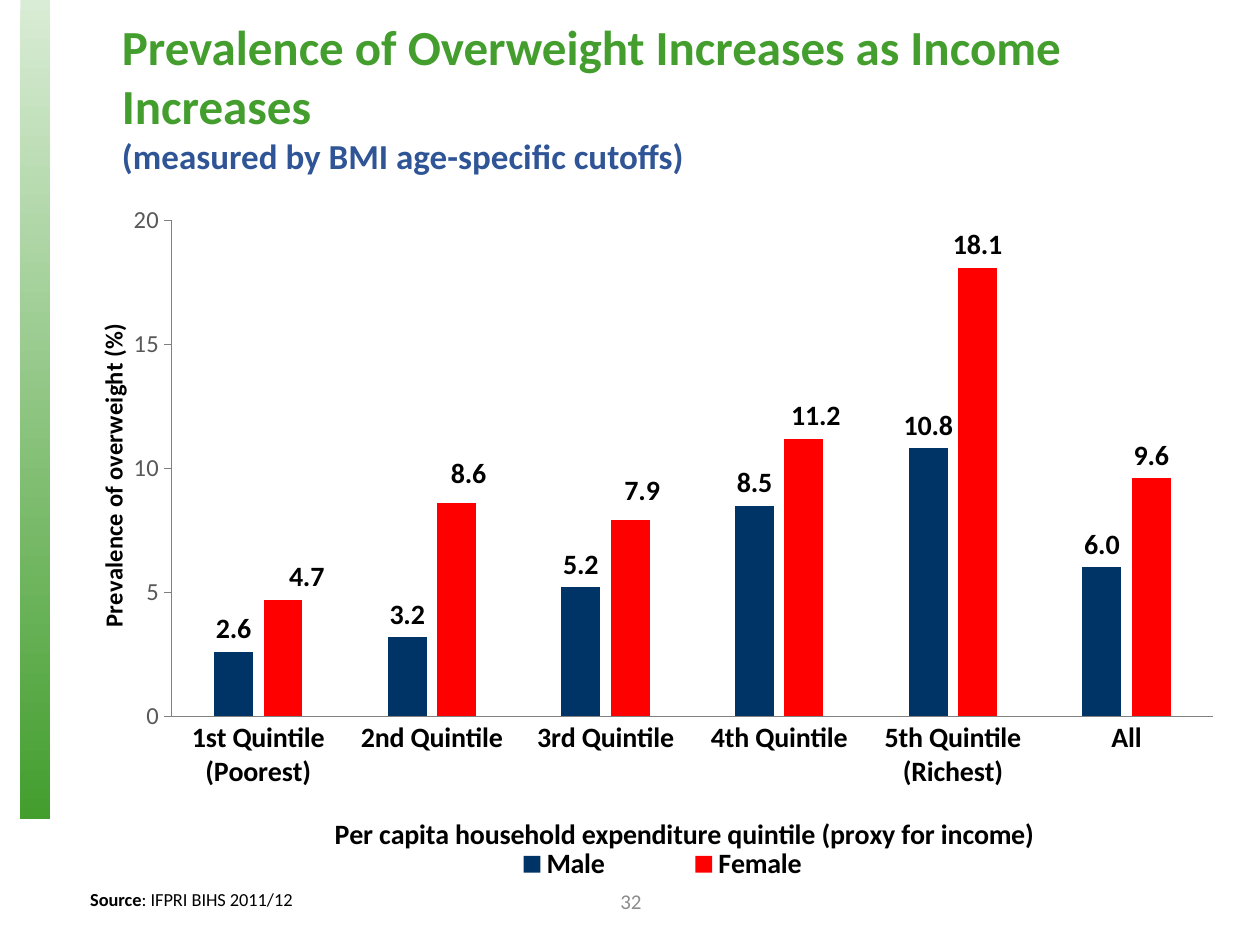
"""Build a slide with a clustered column chart of overweight prevalence by income quintile."""
from lxml import etree
from pptx import Presentation
from pptx import util as u
from pptx.chart.data import CategoryChartData
from pptx.dml.color import RGBColor
from pptx.enum import chart as charts, shapes, text
from pptx.oxml.ns import qn

GREEN = RGBColor(0x43, 0x9E, 0x2E)
PALE_GREEN = RGBColor(0xD9, 0xEC, 0xD5)
BLUE = RGBColor(0x2F, 0x55, 0x97)
NAVY = RGBColor(0x00, 0x33, 0x66)
RED = RGBColor(0xFF, 0x00, 0x00)
BLACK = RGBColor(0x00, 0x00, 0x00)
DARK_GREY = RGBColor(0x59, 0x59, 0x59)
MID_GREY = RGBColor(0x80, 0x80, 0x80)
LIGHT_GREY = RGBColor(0x8C, 0x8C, 0x8C)

CATEGORIES = ["1st Quintile\n(Poorest)", "2nd Quintile", "3rd Quintile",
              "4th Quintile", "5th Quintile\n(Richest)", "All"]
SERIES = [("Male ", (2.6, 3.2, 5.2, 8.5, 10.8, 6), NAVY),
          ("Female", (4.7, 8.6, 7.9, 11.2, 18.1, 9.6), RED)]
FEMALE_LABEL_SHIFTS = [(0.02, 0), (0.01, -0.01), (0.01, -0.01), (0.01, 0)]


def set_values(target, values):
    """Set each attribute of the target from a dict."""
    for name, value in values.items():
        setattr(target, name, value)


def set_font(font, size, color=BLACK, bold=True):
    """Give a font its face, size, weight and colour."""
    set_values(font, {"name": "Calibri", "size": u.Pt(size), "bold": bold})
    font.color.rgb = color


def add_text(slide, box, paragraphs, anchor, align=text.PP_ALIGN.LEFT):
    """Add a text box; each paragraph is a list of (text, size, colour, bold) runs."""
    shape = slide.shapes.add_textbox(*map(u.Cm, box))
    frame = shape.text_frame
    set_values(frame, {"word_wrap": True, "vertical_anchor": anchor})
    for index, runs in enumerate(paragraphs):
        paragraph = frame.add_paragraph() if index else frame.paragraphs[0]
        paragraph.alignment = align
        for words, *style in runs:
            run = paragraph.add_run()
            run.text = words
            set_font(run.font, *style)


def add_gradient_bar(slide, box):
    """Add a rectangle that darkens from top to bottom."""
    shape = slide.shapes.add_shape(shapes.MSO_SHAPE.RECTANGLE, *map(u.Cm, box))
    shape.shadow.inherit = False
    shape.line.fill.background()
    shape.fill.gradient()
    shape.fill.gradient_angle = 270
    for stop, color in zip(shape.fill.gradient_stops, (PALE_GREEN, GREEN)):
        stop.color.rgb = color


def set_layout(element, index, **values):
    """Place a chart part by fractions of the chart size."""
    for old in element.findall(qn("c:layout")):
        element.remove(old)
    layout = etree.Element(qn("c:layout"))
    manual = etree.SubElement(layout, qn("c:manualLayout"))
    for name, value in values.items():
        etree.SubElement(manual, qn(f"c:{name}")).set("val", str(value))
    element.insert(index, layout)


def format_axis(axis, title, title_size, position, label_style, values):
    """Style an axis and place its title."""
    set_values(axis, {"has_major_gridlines": False, **values})
    axis.format.line.color.rgb = MID_GREY
    axis.format.line.width = u.Pt(0.75)
    set_font(axis.tick_labels.font, *label_style)
    frame = axis.axis_title.text_frame
    frame.text = title
    set_font(frame.paragraphs[0].runs[0].font, title_size)
    x, y = position
    set_layout(axis.axis_title._element, 1, xMode="edge", yMode="edge", x=x, y=y)


def format_series(series, color):
    """Colour a series and show its values above the columns."""
    series.format.fill.solid()
    series.format.fill.fore_color.rgb = color
    labels = series.data_labels
    set_values(labels, {"show_value": True, "number_format": "#,##0.0",
                        "number_format_is_linked": False,
                        "position": charts.XL_LABEL_POSITION.OUTSIDE_END})
    set_font(labels.font, 16)


def shift_label(point, x, y):
    """Move one data label away from its usual place."""
    label = point.data_label
    set_font(label.font, 16)
    label.position = charts.XL_LABEL_POSITION.OUTSIDE_END
    set_layout(label._dLbl, 1, x=x, y=y)


def add_column_chart(slide, box):
    """Add the chart of prevalence by quintile and sex."""
    data = CategoryChartData(number_format="0.0")
    data.categories = CATEGORIES
    for name, values, _ in SERIES:
        data.add_series(name, values)
    chart = slide.shapes.add_chart(
        charts.XL_CHART_TYPE.COLUMN_CLUSTERED, *map(u.Cm, box), data).chart
    set_values(chart, {"has_title": False, "has_legend": True})
    set_font(chart.font, 10, bold=False)
    plot = chart.plots[0]
    set_values(plot, {"gap_width": 219, "overlap": -27, "vary_by_categories": False})
    for series, (_, _, color) in zip(plot.series, SERIES):
        format_series(series, color)
    for index, shift in enumerate(FEMALE_LABEL_SHIFTS):
        shift_label(plot.series[1].points[index], *shift)

    format_axis(chart.category_axis,
                "Per capita household expenditure quintile (proxy for income)", 16,
                (0.24, 0.84), (16,), {"major_tick_mark": charts.XL_TICK_MARK.NONE})
    format_axis(chart.value_axis, "Prevalence of overweight (%)", 14,
                (0.04, 0.16), (14, DARK_GREY, False),
                {"minimum_scale": 0, "maximum_scale": 20, "major_unit": 5,
                 "major_tick_mark": charts.XL_TICK_MARK.OUTSIDE})
    set_values(chart.value_axis.tick_labels,
               {"number_format": "#,##0", "number_format_is_linked": False})

    set_values(chart.legend, {"position": charts.XL_LEGEND_POSITION.BOTTOM,
                              "include_in_layout": False})
    set_font(chart.legend.font, 16)
    set_layout(chart.legend._element, 1, xMode="edge", yMode="edge",
               x=0.34, y=0.89, w=0.36, h=0.05)
    plot_area = chart._chartSpace.find(f"{qn('c:chart')}/{qn('c:plotArea')}")
    set_layout(plot_area, 0, layoutTarget="inner", xMode="edge", yMode="edge",
               x=0.107, y=0.023, w=0.876, h=0.687)


def main():
    """Build and save the slide."""
    presentation = Presentation()
    set_values(presentation, {"slide_width": u.Cm(25.4), "slide_height": u.Cm(19.05)})
    slide = presentation.slides.add_slide(presentation.slide_layouts[6])
    add_gradient_bar(slide, (0.41, 0, 0.61, 16.51))
    add_text(slide, (9.86, 17.65, 5.72, 1.02), [[("32", 12, LIGHT_GREY, False)]],
             text.MSO_ANCHOR.MIDDLE, text.PP_ALIGN.CENTER)
    add_text(slide, (2.21, 0.86, 20.9, 2.82),
             [[("Prevalence of Overweight Increases as Income Increases", 28, GREEN)],
              [("(measured by BMI age-specific cutoffs)", 20, BLUE)]],
             text.MSO_ANCHOR.BOTTOM)
    add_column_chart(slide, (0.89, 4.11, 23.98, 14.55))
    add_text(slide, (1.57, 17.78, 13.61, 0.74),
             [[("Source", 10.5), (": IFPRI BIHS 2011/12", 10.5, BLACK, False)]],
             text.MSO_ANCHOR.TOP)
    presentation.save("out.pptx")


if __name__ == "__main__":
    main()
